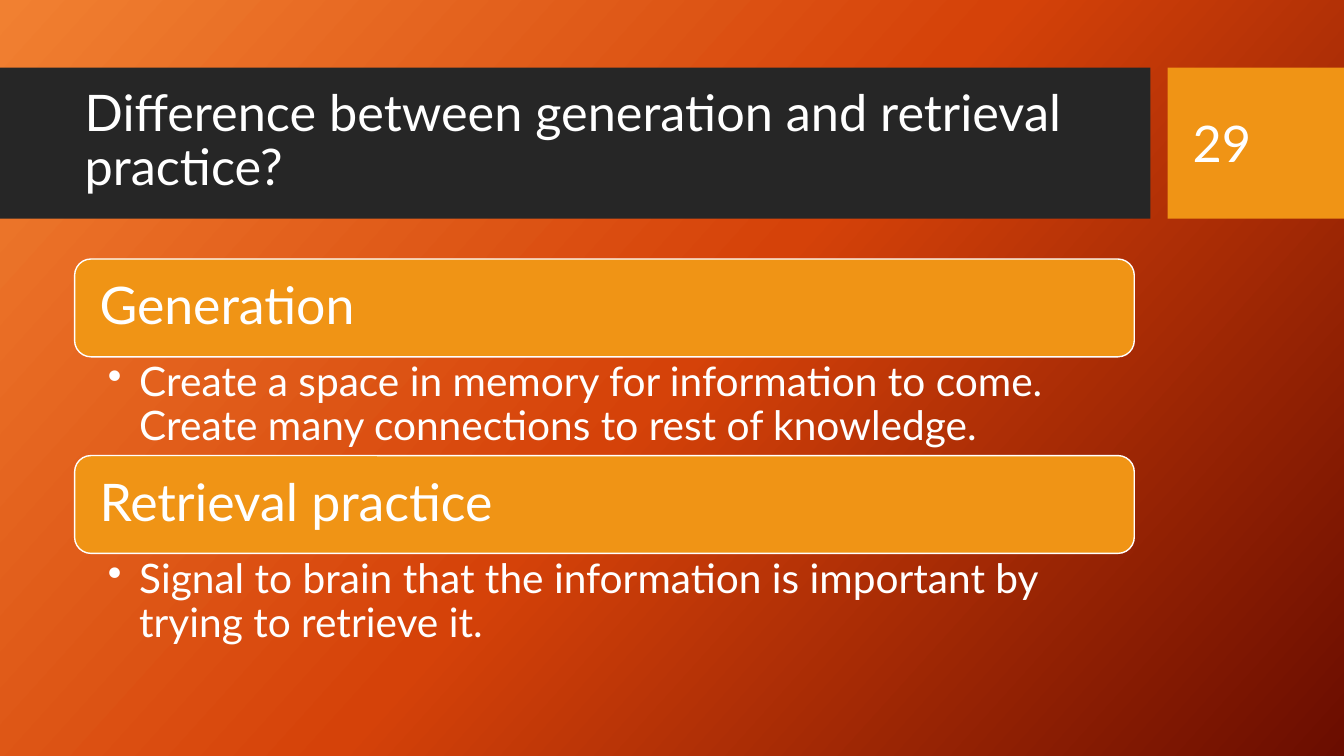
from copy import deepcopy

from lxml import etree
from pptx import Presentation
from pptx.dml.color import RGBColor
from pptx.enum.shapes import MSO_SHAPE
from pptx.enum.text import MSO_ANCHOR, MSO_AUTO_SIZE, PP_ALIGN
from pptx.oxml.ns import qn
from pptx.util import Inches, Pt

RECTANGLE = MSO_SHAPE.RECTANGLE
ROUNDED = MSO_SHAPE.ROUNDED_RECTANGLE
TOP, MIDDLE = MSO_ANCHOR.TOP, MSO_ANCHOR.MIDDLE
LEFT = PP_ALIGN.LEFT
NO_AUTOFIT = MSO_AUTO_SIZE.NONE

FONT = "Lato"
COLORS = {
    "white": "FFFFFF",
    "charcoal": "262626",
    "amber": "F09415",
    "glow": "F18031",
    "ember": "D54209",
    "maroon": "6A0D00",
}


def add_panel(kind, left, top, width, height, color):
    panel = page.shapes.add_shape(
        kind, Inches(left), Inches(top), Inches(width), Inches(height)
    )
    panel.shadow.inherit = False
    panel.fill.solid()
    panel.fill.fore_color.rgb = RGBColor.from_string(COLORS[color])
    panel.line.fill.background()
    return panel


def write_text(box, text, size, anchor, insets, spacing=0.9, bullet=False):
    frame = box.text_frame
    frame.text = text
    frame.word_wrap = True
    frame.auto_size = NO_AUTOFIT
    frame.vertical_anchor = anchor
    frame.margin_left, frame.margin_top, frame.margin_right, frame.margin_bottom = (
        Inches(inset) for inset in insets
    )
    para = frame.paragraphs[0]
    para.alignment = LEFT
    para.line_spacing = spacing
    if bullet:
        para.level = 1
        properties = para._p.get_or_add_pPr()
        properties.set("marL", str(Inches(0.31)))
        properties.set("indent", str(-Inches(0.31)))
        etree.SubElement(properties, qn("a:buChar")).set("char", "•")
    font = para.runs[0].font
    font.name = FONT
    font.size = Pt(size)
    font.color.rgb = RGBColor.from_string(COLORS["white"])


deck = Presentation()
deck.slide_width = Inches(13.33)
deck.slide_height = Inches(7.5)
page = deck.slides.add_slide(deck.slide_layouts[5])

background = page.background.fill
background.gradient()
background.gradient_angle = 360 - 42
stop_list = background.gradient_stops[0]._gs.getparent()
stop_list.append(deepcopy(stop_list[0]))
gradient = [(0, "glow"), (0.5, "ember"), (1, "maroon")]
for stop, (position, color) in zip(background.gradient_stops, gradient):
    stop.position = position
    stop.color.rgb = RGBColor.from_string(COLORS[color])

add_panel(RECTANGLE, 0, 0.67, 11.41, 1.5, "charcoal")
add_panel(RECTANGLE, 11.58, 0.67, 1.75, 1.5, "amber")

title = page.shapes.title
title.left, title.top = Inches(0.74), Inches(0.82)
title.width, title.height = Inches(10.51), Inches(1.18)
page.shapes.element.append(title.element)
write_text(
    title,
    "Difference between generation and retrieval practice?",
    36,
    MIDDLE,
    (0.1, 0.05, 0.1, 0.05),
)

topics = [
    (
        "Generation",
        "Create a space in memory for information to come. "
        "Create many connections to rest of knowledge.",
    ),
    (
        "Retrieval practice",
        "Signal to brain that the information is important by trying to retrieve it.",
    ),
]
for index, (heading, detail) in enumerate(topics):
    top = 2.57 + index * 1.95
    card = add_panel(ROUNDED, 0.74, top, 10.51, 0.97, "amber")
    card.line.color.rgb = RGBColor.from_string(COLORS["white"])
    card.line.width = Pt(1)
    write_text(card, heading, 37, MIDDLE, (0.2, 0.2, 0.2, 0.2))

    detail_box = page.shapes.add_textbox(
        Inches(0.74), Inches(top + 0.97), Inches(10.51), Inches(0.98)
    )
    write_text(detail_box, detail, 29, TOP, (0.33, 0.05, 0.29, 0.05), bullet=True)

number_box = page.shapes.add_textbox(
    Inches(11.73), Inches(0.82), Inches(1.26), Inches(1.19)
)
write_text(number_box, "29", 36, MIDDLE, (0.1, 0.05, 0.1, 0.05), spacing=1.0)

deck.save("out.pptx")
